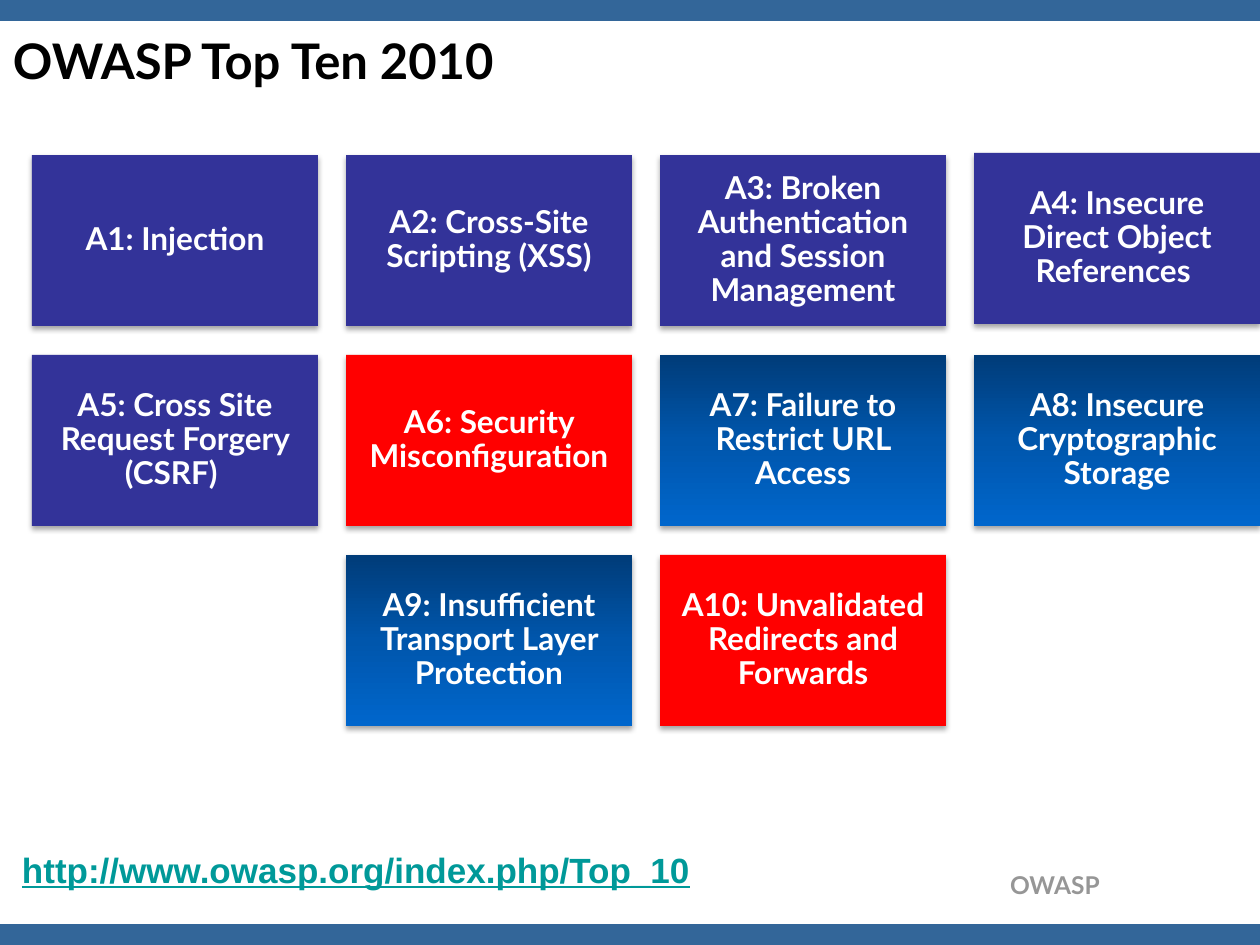
import pptx
import pptx.dml.color
import pptx.enum.shapes
import pptx.enum.text
import pptx.oxml
import pptx.oxml.ns
import pptx.util

EMU_PER_PX = 914400 / 126
ALIGN = pptx.enum.text.PP_ALIGN
ANCHOR = pptx.enum.text.MSO_ANCHOR
NO_AUTOFIT = pptx.enum.text.MSO_AUTO_SIZE.NONE
RECTANGLE = pptx.enum.shapes.MSO_SHAPE.RECTANGLE

COLORS = {
    "band": "336699", "kept": "333399", "added": "FF0000",
    "fade_top": "003C79", "fade_middle": "0056AC", "fade_bottom": "0066CC",
    "paper": "FFFFFF", "title": "000000", "footer": "969696",
    "link": "009999", "shadow": "000000",
}
RISKS = [
    [("A1: Injection", "kept"),
     ("A2: Cross-Site Scripting (XSS)", "kept"),
     ("A3: Broken Authentication and Session Management", "kept"),
     ("A4: Insecure Direct Object References ", "kept")],
    [("A5: Cross Site Request Forgery (CSRF) ", "kept"),
     ("A6: Security Misconfiguration", "added"),
     ("A7: Failure to Restrict URL Access", "fade"),
     ("A8: Insecure Cryptographic Storage", "fade")],
    [("A9: Insufficient Transport Layer Protection", "fade"),
     ("A10: Unvalidated Redirects and Forwards", "added")],
]
COLUMNS = 4
TILE_WIDTH, TILE_HEIGHT = 286, 171
COLUMN_STEP, ROW_STEP = 314, 200
RAISED = {"A4": 2}


def px(length):
    return pptx.util.Emu(round(length * EMU_PER_PX))


def rgb(name):
    return pptx.dml.color.RGBColor.from_string(COLORS[name])


def apply(target, values):
    for name, value in values.items():
        setattr(target, name, value)


def place(part, box):
    apply(part, dict(zip(("left", "top", "width", "height"), map(px, box))))


def write(part, text, color, size, font="Lato", align=ALIGN.LEFT,
          anchor=ANCHOR.MIDDLE, inset=(13, 6), wrap=True, spacing=1.0,
          underline=False):
    frame = part.text_frame
    across, down = map(px, inset)
    apply(frame, {
        "text": text, "auto_size": NO_AUTOFIT, "word_wrap": wrap,
        "vertical_anchor": anchor, "margin_left": across,
        "margin_right": across, "margin_top": down, "margin_bottom": down,
    })
    paragraph = frame.paragraphs[0]
    apply(paragraph, {"alignment": align, "line_spacing": spacing})
    face = paragraph.runs[0].font
    apply(face, {"name": font, "size": pptx.util.Pt(size), "bold": True,
                 "underline": underline})
    face.color.rgb = rgb(color)


def add_panel(slide, box, color):
    panel = slide.shapes.add_shape(RECTANGLE, *map(px, box))
    panel.shadow.inherit = False
    panel.line.fill.background()
    if color == "fade":
        add_fade(panel)
    else:
        panel.fill.solid()
        panel.fill.fore_color.rgb = rgb(color)
    return panel


def add_fade(panel):
    stops = [(0, "fade_top"), (50, "fade_middle"), (100, "fade_bottom")]
    stop_xml = "".join(
        f'<a:gs pos="{pos * 1000}"><a:srgbClr val="{COLORS[name]}"/></a:gs>'
        for pos, name in stops)
    fade = pptx.oxml.parse_xml(
        f'<a:gradFill {pptx.oxml.ns.nsdecls("a")} rotWithShape="1">'
        f'<a:gsLst>{stop_xml}</a:gsLst>'
        '<a:lin ang="5400000" scaled="0"/></a:gradFill>')
    outline = panel._element.spPr.find(pptx.oxml.ns.qn("a:ln"))
    outline.addprevious(fade)


def add_shadow(panel):
    effects = panel._element.spPr.find(pptx.oxml.ns.qn("a:effectLst"))
    effects.append(pptx.oxml.parse_xml(
        f'<a:outerShdw {pptx.oxml.ns.nsdecls("a")} blurRad="39370" '
        'dist="22860" dir="5400000" rotWithShape="0">'
        f'<a:srgbClr val="{COLORS["shadow"]}"><a:alpha val="35000"/>'
        '</a:srgbClr></a:outerShdw>'))


def add_bands(slide, box):
    left, top, width, height = box
    thickness = 21
    for band_top in (top, top + height - thickness):
        add_panel(slide, (left, band_top, width, thickness), "band")


def add_title(slide, box):
    title = slide.shapes.title
    place(title, box)
    write(title, "OWASP Top Ten 2010", "title", 28)


def add_risk(slide, box, risk, color):
    tile = add_panel(slide, box, color)
    add_shadow(tile)
    write(tile, risk, "paper", 18, align=ALIGN.CENTER, inset=(9, 9),
          spacing=0.9)


def add_risk_grid(slide, left, top):
    for row, risks in enumerate(RISKS):
        first_column = (COLUMNS - len(risks)) // 2
        for column, (risk, color) in enumerate(risks, first_column):
            lift = RAISED.get(risk.split(":")[0], 0)
            add_risk(slide, (left + column * COLUMN_STEP,
                             top + row * ROW_STEP - lift,
                             TILE_WIDTH, TILE_HEIGHT), risk, color)


def add_address(slide, box):
    address = add_panel(slide, box, "paper")
    write(address, "http://www.owasp.org/index.php/Top_10", "link", 20,
          font="Arial", wrap=False, underline=True)


def add_footer(slide, box):
    footer = slide.shapes.add_textbox(*map(px, box))
    write(footer, "OWASP", "footer", 14, align=ALIGN.RIGHT,
          anchor=ANCHOR.TOP)


def main():
    deck = pptx.Presentation()
    apply(deck, {"slide_width": px(1260), "slide_height": px(945)})
    slide = deck.slides.add_slide(deck.slide_layouts[5])
    add_bands(slide, (0, 0, 1260, 945))
    add_footer(slide, (784, 864, 329, 42))
    add_title(slide, (0, 5, 1134, 110))
    add_risk_grid(slide, 32, 155)
    add_address(slide, (9, 842, 698, 55))
    deck.save("out.pptx")


if __name__ == "__main__":
    main()
